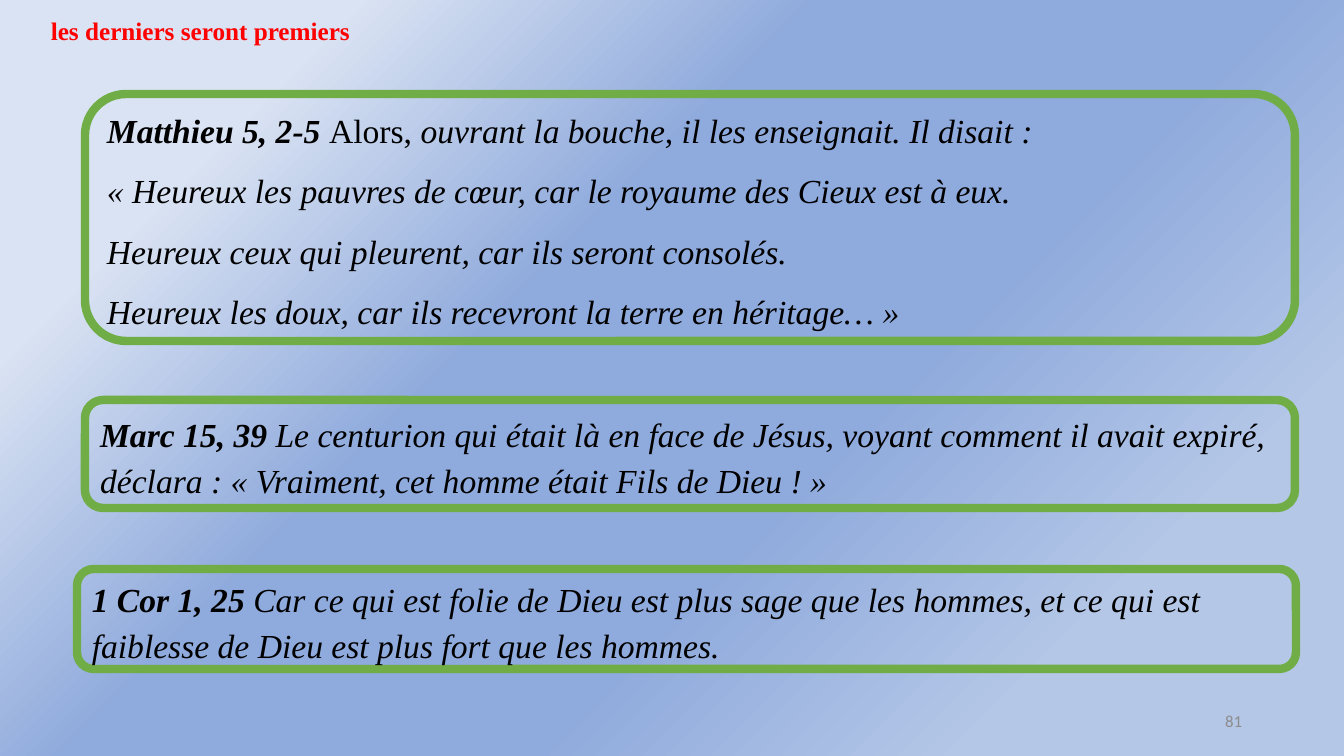
import copy

import pptx
import pptx.dml.color
import pptx.enum.shapes
import pptx.enum.text
import pptx.oxml.ns
import pptx.util

RGBColor = pptx.dml.color.RGBColor
Align = pptx.enum.text.PP_ALIGN
Anchor = pptx.enum.text.MSO_ANCHOR

EMU_PER_PX = 914400 / 100.8
SERIF = "Times New Roman"
BLACK = RGBColor(0x00, 0x00, 0x00)
RED = RGBColor(0xFF, 0x00, 0x00)
GREEN = RGBColor(0x70, 0xAD, 0x47)
GREY = RGBColor(0x8C, 0x8C, 0x8C)
SKY = [
    (0.18, RGBColor(0xB4, 0xC7, 0xE7)),
    (0.39, RGBColor(0x8F, 0xAA, 0xDC)),
    (0.61, RGBColor(0x8F, 0xAA, 0xDC)),
    (0.83, RGBColor(0xDA, 0xE3, 0xF3)),
]

# Each verse: box in px, then paragraphs of (text, bold, italic) runs.
VERSES = [
    ((85, 94, 1210, 247), [
        [("Matthieu 5, 2-5 ", True, True),
         ("Alors, ", False, False),
         ("ouvrant la bouche, il les enseignait. Il disait :", False, True)],
        [("« Heureux les pauvres de cœur, car le royaume des Cieux est à eux.", False, True)],
        [("Heureux ceux qui pleurent, car ils seront consolés.", False, True)],
        [("Heureux les doux, car ils recevront la terre en héritage… »", False, True)],
    ]),
    ((85, 400, 1210, 108), [
        [("Marc 15, 39 ", True, True),
         ("Le centurion qui était là en face de Jésus, voyant comment il avait expiré, "
          "déclara : « Vraiment, cet homme était Fils de Dieu ! »", False, True)],
    ]),
    ((77, 569, 1219, 100), [
        [("1 Cor 1, 25 ", True, True),
         ("Car ce qui est folie de Dieu est plus sage que les hommes, et ce qui est "
          "faiblesse de Dieu est plus fort que les hommes.", False, True)],
    ]),
]


def px(length):
    return pptx.util.Emu(round(length * EMU_PER_PX))


def set_font(paragraph, name, size, color):
    paragraph.font.name = name
    paragraph.font.size = pptx.util.Pt(size)
    paragraph.font.color.rgb = color


def paint_background(slide):
    fill = slide.background.fill
    fill.gradient()
    fill.gradient_angle = 135
    stop_list = slide.element.find(".//" + pptx.oxml.ns.qn("a:gsLst"))
    while len(stop_list) < len(SKY):
        stop_list.append(copy.deepcopy(stop_list[0]))
    for stop, (position, color) in zip(fill.gradient_stops, SKY):
        stop.position = position
        stop.color.rgb = color


def add_title(slide, text):
    title = slide.shapes.title
    title.left, title.top, title.width, title.height = map(px, (-29, 10, 459, 40))
    frame = title.text_frame
    frame.text = text
    frame.word_wrap = True
    frame.auto_size = pptx.enum.text.MSO_AUTO_SIZE.NONE
    frame.vertical_anchor = Anchor.TOP
    heading = frame.paragraphs[0]
    heading.alignment = Align.CENTER
    set_font(heading, SERIF, 18, RED)
    heading.font.bold = True


def add_verse(slide, box, paragraphs):
    verse = slide.shapes.add_shape(
        pptx.enum.shapes.MSO_SHAPE.ROUNDED_RECTANGLE, *map(px, box))
    verse.shadow.inherit = False
    verse.fill.background()
    verse.line.color.rgb = GREEN
    verse.line.width = pptx.util.Pt(6)
    frame = verse.text_frame
    frame.word_wrap = True
    frame.vertical_anchor = Anchor.MIDDLE
    for index, runs in enumerate(paragraphs):
        paragraph = frame.add_paragraph() if index else frame.paragraphs[0]
        paragraph.alignment = Align.LEFT
        paragraph.line_spacing = 1.15
        paragraph.space_after = pptx.util.Pt(10)
        set_font(paragraph, SERIF, 24, BLACK)
        for text, bold, italic in runs:
            run = paragraph.add_run()
            run.text = text
            run.font.bold = bold
            run.font.italic = italic


def add_page_number(slide, number):
    frame = slide.shapes.add_textbox(*map(px, (950, 701, 302, 40))).text_frame
    frame.text = number
    frame.word_wrap = True
    frame.vertical_anchor = Anchor.MIDDLE
    frame.paragraphs[0].alignment = Align.RIGHT
    set_font(frame.paragraphs[0], "Calibri", 12, GREY)


def main():
    deck = pptx.Presentation()
    deck.slide_width, deck.slide_height = px(1344), px(756)
    slide = deck.slides.add_slide(deck.slide_layouts.get_by_name("Title Only"))
    paint_background(slide)
    add_title(slide, "les derniers seront premiers")
    for box, paragraphs in VERSES:
        add_verse(slide, box, paragraphs)
    add_page_number(slide, "81")
    deck.save("out.pptx")


if __name__ == "__main__":
    main()
